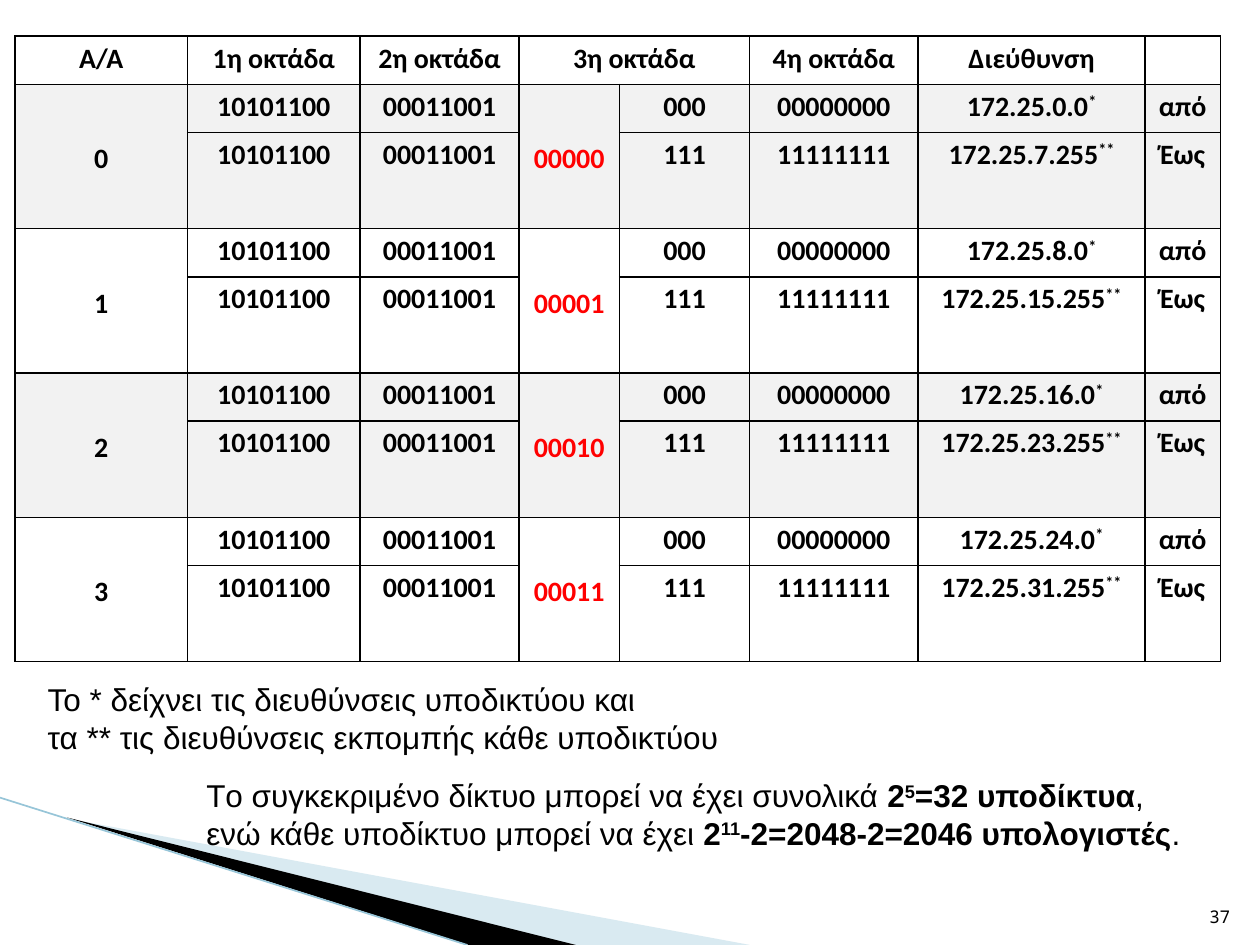
from lxml.etree import SubElement
from pptx import Presentation
from pptx.dml.color import RGBColor
from pptx.enum.text import MSO_ANCHOR, PP_ALIGN
from pptx.oxml.ns import qn
from pptx.util import Cm, Pt

HEADINGS = ["Α/Α", "1η οκτάδα", "2η οκτάδα", "3η οκτάδα", "", "4η οκτάδα", "Διεύθυνση", ""]
COLUMN_WIDTHS = [3.48, 3.48, 3.2, 2.03, 2.62, 3.4, 4.57, 1.52]
ROW_HEIGHT = 0.97
SUBNETS = 4
BLACK = "000000"


def colour(value):
    """Turn a hex string into a colour."""
    return RGBColor.from_string(value)


def add_runs(paragraph, pieces, size, font="Arial", ink=BLACK):
    """Append (text, bold, raised) pieces to a paragraph."""
    for text, bold, raised in pieces:
        run = paragraph.add_run()
        run.text = text
        run.font.name = font
        run.font.size = Pt(size)
        run.font.bold = bold
        run.font.color.rgb = colour(ink)
        if raised:
            run._r.get_or_add_rPr().set("baseline", "30000")


def add_borders(cell):
    """Draw a thin black line on every side of a cell."""
    properties = cell._tc.get_or_add_tcPr()
    for side in ("lnL", "lnR", "lnT", "lnB"):
        border = SubElement(properties, qn(f"a:{side}"), w=str(Pt(1)))
        fill = SubElement(border, qn("a:solidFill"))
        SubElement(fill, qn("a:srgbClr"), val=BLACK)


def fill_cell(cell, text, mark="", band="FFFFFF", ink=BLACK):
    """Write a centred bold entry, with an optional raised mark."""
    add_borders(cell)
    cell.fill.solid()
    cell.fill.fore_color.rgb = colour(band)
    cell.margin_left = cell.margin_right = Cm(0.18)
    cell.margin_top = cell.margin_bottom = 0
    if cell.is_merge_origin and cell.span_height > 1:
        cell.vertical_anchor = MSO_ANCHOR.MIDDLE
    if text:
        paragraph = cell.text_frame.paragraphs[0]
        paragraph.alignment = PP_ALIGN.CENTER
        paragraph.line_spacing = 1.15
        pieces = [(text, True, False)] + ([(mark, True, True)] if mark else [])
        add_runs(paragraph, pieces, 16, "Calibri", ink)


def subnet_rows(number):
    """Return the first and last address rows of a subnet."""
    first, last = 8 * number, 8 * number + 7
    network = ["10101100", "00011001"]
    return [
        [str(number), *network, f"{number:05b}", "000", "0" * 8, f"172.25.{first}.0", "από"],
        ["", *network, "", "111", "1" * 8, f"172.25.{last}.255", "Έως"],
    ]


def add_subnet_table(slide, left, top):
    """Place the table of subnets and their address ranges."""
    heights = [ROW_HEIGHT] + [ROW_HEIGHT, 2 * ROW_HEIGHT] * SUBNETS
    table = slide.shapes.add_table(
        len(heights), len(COLUMN_WIDTHS), Cm(left), Cm(top),
        Cm(sum(COLUMN_WIDTHS)), Cm(sum(heights))).table
    for column, width in zip(table.columns, COLUMN_WIDTHS):
        column.width = Cm(width)
    for row, height in zip(table.rows, heights):
        row.height = Cm(height)
    table.cell(0, 3).merge(table.cell(0, 4))
    for column, heading in enumerate(HEADINGS):
        fill_cell(table.cell(0, column), heading)
    for number in range(SUBNETS):
        start = 1 + 2 * number
        band = "FFFFFF" if number % 2 else "F2F2F2"
        for column in (0, 3):
            table.cell(start, column).merge(table.cell(start + 1, column))
        for offset, entries in enumerate(subnet_rows(number)):
            for column, entry in enumerate(entries):
                mark = "*" * (offset + 1) if column == 6 else ""
                ink = "FF0000" if column == 3 else BLACK
                fill_cell(table.cell(start + offset, column), entry, mark, band, ink)


def add_note(slide, box, paragraphs, size=18, font="Arial",
             alignment=PP_ALIGN.LEFT, anchor=MSO_ANCHOR.TOP):
    """Place a wrapped text box holding paragraphs of pieces."""
    frame = slide.shapes.add_textbox(*map(Cm, box)).text_frame
    frame.word_wrap = True
    frame.vertical_anchor = anchor
    for index, pieces in enumerate(paragraphs):
        paragraph = frame.add_paragraph() if index else frame.paragraphs[0]
        paragraph.alignment = alignment
        add_runs(paragraph, pieces, size, font)
    return frame


def add_wedge(slide, left, top, corners, fill, alpha=None):
    """Draw a filled sliver whose corners are relative to its start."""
    points = [(Cm(left + x), Cm(top + y)) for x, y in corners]
    builder = slide.shapes.build_freeform(Cm(left), Cm(top))
    builder.add_line_segments(points, close=True)
    wedge = builder.convert_to_shape()
    wedge.shadow.inherit = False
    wedge.line.fill.background()
    wedge.fill.solid()
    wedge.fill.fore_color.rgb = colour(fill)
    if alpha:
        tint = wedge._element.spPr.find(f".//{qn('a:srgbClr')}")
        SubElement(tint, qn("a:alpha"), val=str(alpha * 1000))


def add_corner_sweep(slide, left, top):
    """Draw the decorative sweep in the lower left corner."""
    add_wedge(slide, left + 1.4, top + 0.43, [(13.72, 2.54), (10.18, 2.54)], "A0CBDC", 40)
    add_wedge(slide, left + 1.35, top + 0.4, [(10.26, 2.57), (8.1, 2.57)], BLACK)
    edge = slide.shapes.add_connector(
        1, Cm(left), Cm(top), Cm(left + 9.42), Cm(top + 2.97))
    edge.line.color.rgb = colour("97C5D8")
    edge.line.width = Pt(0.95)
    SubElement(edge._element.spPr, qn("a:effectLst"))


def main():
    """Build and save the slide."""
    deck = Presentation()
    deck.slide_width, deck.slide_height = Cm(25.4), Cm(19.05)
    slide = deck.slides.add_slide(deck.slide_layouts[6])
    add_corner_sweep(slide, 0, 16.08)
    add_note(slide, (24.03, 17.8, 1.02, 1.02), [[("37", False, False)]], 10,
             "Noto Sans Mono", PP_ALIGN.RIGHT, MSO_ANCHOR.BOTTOM).word_wrap = False
    add_subnet_table(slide, 0.3, 0.73)
    legend = add_note(slide, (0.71, 13.51, 24, 2.57), [
        [("Το * δείχνει τις διευθύνσεις υποδικτύου και", False, False)],
        [("τα ** τις διευθύνσεις εκπομπής κάθε υποδικτύου", False, False)],
    ], alignment=PP_ALIGN.JUSTIFY)
    legend.margin_top = Cm(0.2)
    add_note(slide, (3.91, 15.52, 20.6, 1.8), [[
        ("Tο συγκεκριμένο δίκτυο μπορεί να έχει συνολικά ", False, False),
        ("2", True, False),
        ("5", True, True),
        ("=32 υποδίκτυα", True, False),
        (", ενώ κάθε υποδίκτυο μπορεί να έχει ", False, False),
        ("2", True, False),
        ("11", True, True),
        ("-2=2048-2=2046 υπολογιστές", True, False),
        (".", False, False),
    ]])
    deck.save("out.pptx")


if __name__ == "__main__":
    main()
